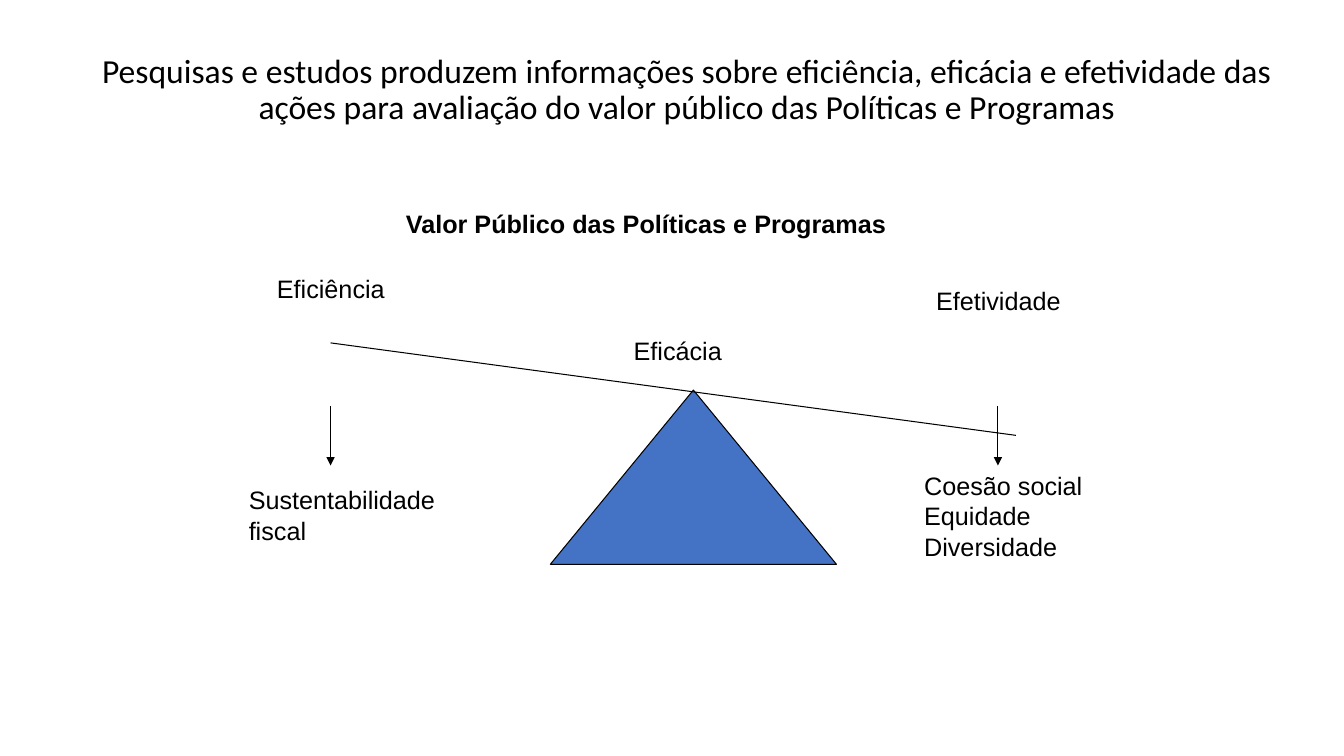
"""Build a slide showing public value as a scale of efficiency, efficacy and effectiveness."""
import pptx
import pptx.util
import pptx.dml.color
import pptx.enum.shapes
import pptx.enum.text
import pptx.oxml
import pptx.oxml.ns

Cm, Pt = pptx.util.Cm, pptx.util.Pt
BLACK, BLUE = "000000", "4472C4"

TITLE = ("Pesquisas e estudos produzem informações sobre eficiência, eficácia e "
         "efetividade das ações para avaliação do valor público das Políticas e Programas")
TITLE_BOX = (2.13, 1.24, 30.35, 1.8)
HEADING = "Valor Público das Políticas e Programas"
HEADING_BOX = (9.98, 5.13, 15.01, 1.02)
LABELS = [
    ("Eficiência", (6.73, 6.76, 5.79, 1.02)),
    ("Eficácia", (15.72, 8.33, 5.79, 1.02)),
    ("Efetividade", (23.34, 7.06, 5.79, 1.02)),
    ("Sustentabilidade fiscal", (6.02, 12.09, 6.4, 1.8)),
    ("Coesão social\nEquidade\nDiversidade", (23.04, 11.73, 6.4, 2.57)),
]
PIVOT = (13.87, 9.83, 7.21, 4.39)
BEAM = (8.33, 8.64, 25.6, 10.97)
ARROWS = [8.33, 25.15]
TOP, END = 10.24, 11.73


def color(code):
    return pptx.dml.color.RGBColor.from_string(code)


def write(slide, text, box, size=18, font="Arial", bold=False, align="LEFT", space=None):
    frame = slide.shapes.add_textbox(*map(Cm, box)).text_frame
    frame.word_wrap = True
    frame.text = text
    for para in frame.paragraphs:
        para.alignment = getattr(pptx.enum.text.PP_ALIGN, align)
        para.line_spacing = space
        for run in para.runs:
            run.font.size = Pt(size)
            run.font.name = font
            run.font.bold = bold
            run.font.color.rgb = color(BLACK)


def stroke(line):
    line.color.rgb = color(BLACK)
    line.width = Pt(0.75)


def connect(slide, ends, arrow=False):
    kind = pptx.enum.shapes.MSO_CONNECTOR.STRAIGHT
    link = slide.shapes.add_connector(kind, *map(Cm, ends))
    stroke(link.line)
    props = link._element.spPr
    if arrow:
        tail = pptx.oxml.parse_xml(
            f'<a:tailEnd {pptx.oxml.ns.nsdecls("a")} type="triangle"/>')
        link.line._get_or_add_ln().append(tail)
    props.append(pptx.oxml.parse_xml(f'<a:effectLst {pptx.oxml.ns.nsdecls("a")}/>'))


def main():
    deck = pptx.Presentation()
    deck.slide_width, deck.slide_height = Cm(33.87), Cm(19.05)
    slide = deck.slides.add_slide(deck.slide_layouts[6])

    kind = pptx.enum.shapes.MSO_SHAPE.ISOSCELES_TRIANGLE
    pivot = slide.shapes.add_shape(kind, *map(Cm, PIVOT))
    pivot.shadow.inherit = False
    pivot.fill.solid()
    pivot.fill.fore_color.rgb = color(BLUE)
    stroke(pivot.line)

    connect(slide, BEAM)
    for x in ARROWS:
        connect(slide, (x, TOP, x, END), arrow=True)
    for text, box in LABELS:
        write(slide, text, box)
    write(slide, HEADING, HEADING_BOX, bold=True)
    write(slide, TITLE, TITLE_BOX, size=24, font="Calibri", align="CENTER", space=0.9)
    deck.save("out.pptx")


if __name__ == "__main__":
    main()
